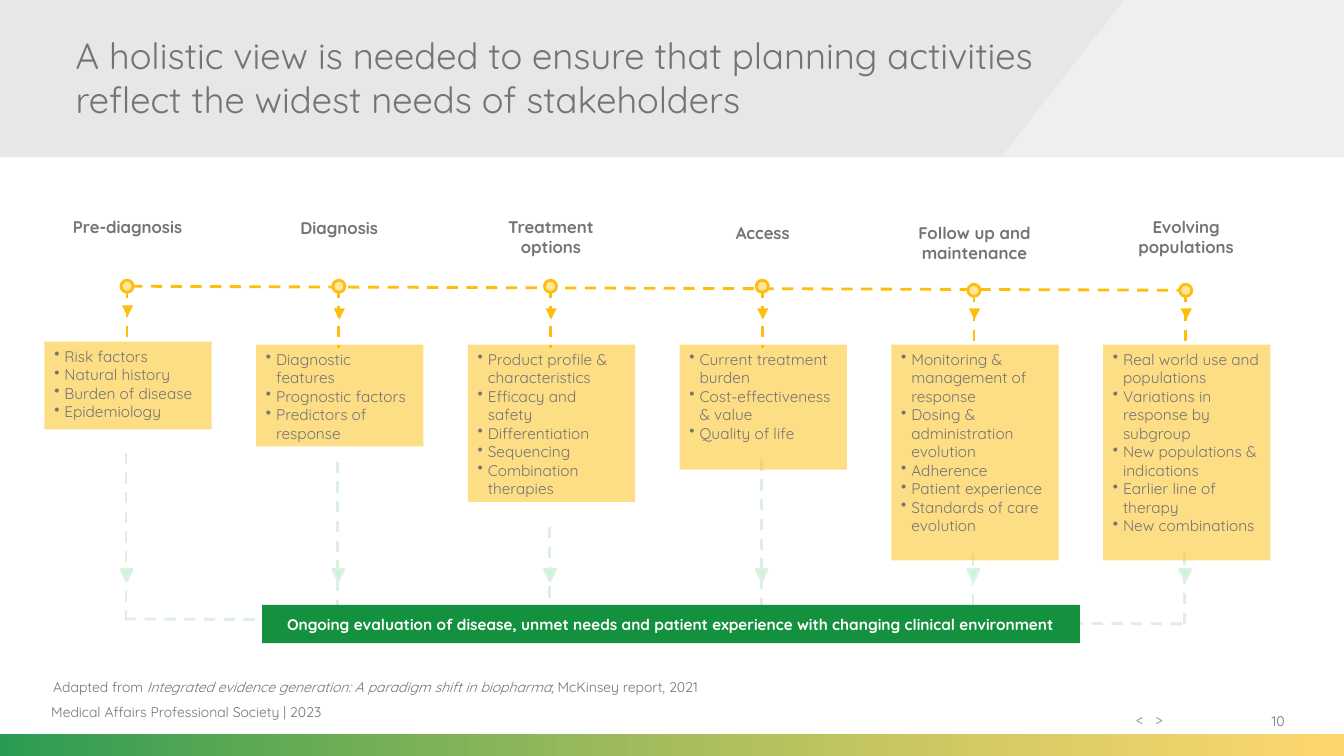
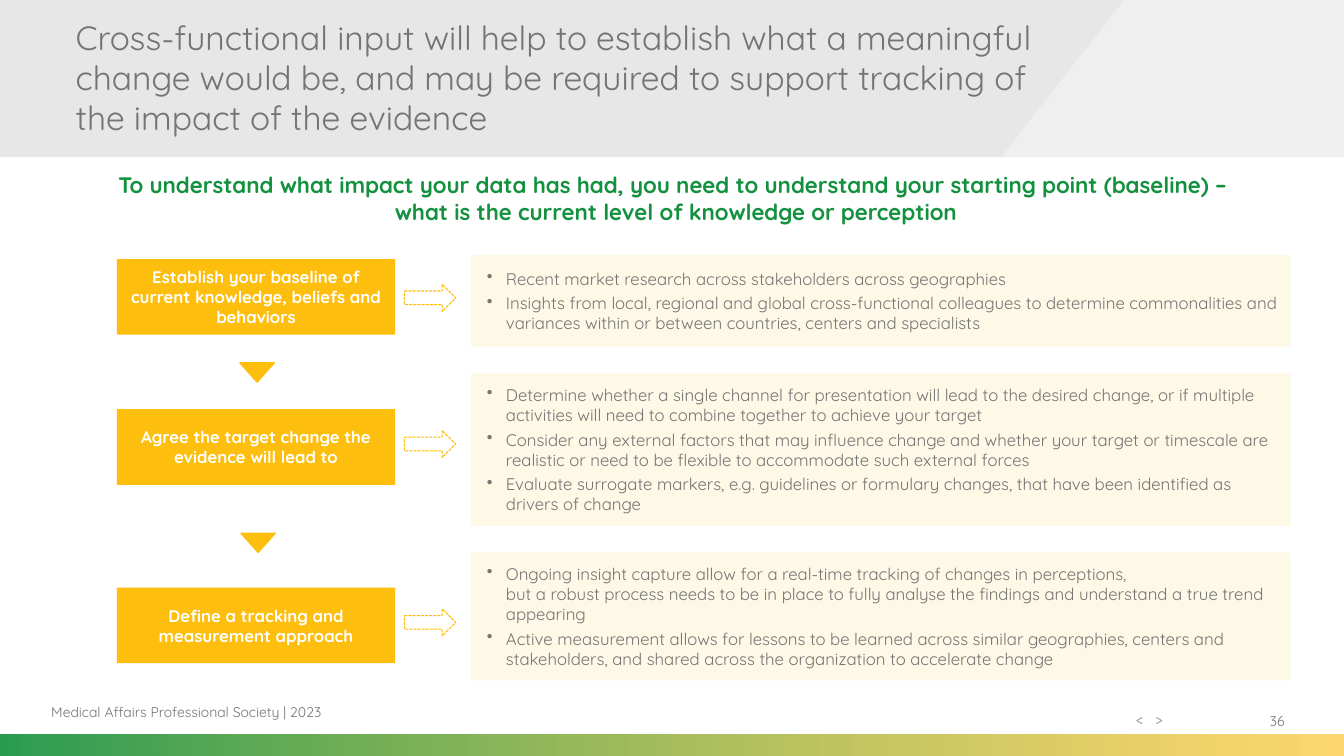
from lxml.etree import SubElement
from pptx import Presentation
from pptx.dml.color import RGBColor
from pptx.enum.dml import MSO_LINE as Dash
from pptx.enum.shapes import MSO_CONNECTOR as Connector, MSO_SHAPE as Shape
from pptx.enum.text import MSO_ANCHOR as Anchor, MSO_AUTO_SIZE as AutoSize, PP_ALIGN as Align
from pptx.oxml.ns import qn
from pptx.util import Pt

PX = 9144
FONT = "Quicksand"
GREY = RGBColor(0x74, 0x74, 0x74)
NAV_GREY = RGBColor(0x80, 0x80, 0x80)
BAND = RGBColor(0xD9, 0xD9, 0xD9)
WEDGE = RGBColor(0xF2, 0xF2, 0xF2)
WHITE = RGBColor(0xFF, 0xFF, 0xFF)
GREEN = RGBColor(0x13, 0x91, 0x3F)
MINT = RGBColor(0xC2, 0xF7, 0xD4)
PALE_GREEN = RGBColor(0xDD, 0xF0, 0xE4)
AMBER = RGBColor(0xFE, 0xBE, 0x0D)
PALE_AMBER = RGBColor(0xFF, 0xE5, 0x9E)


def draw(slide, kind, box, fill=None, alpha=100, line=None, weight=1):
    lengths = [value * PX for value in box]
    if kind is None:
        return slide.shapes.add_textbox(*lengths)
    shape = slide.shapes.add_shape(kind, *lengths)
    shape.shadow.inherit = False
    shape.fill.solid()
    shape.fill.fore_color.rgb = fill
    if alpha < 100:
        color = next(shape.element.spPr.iter(qn("a:srgbClr")))
        SubElement(color, qn("a:alpha"), val=str(alpha * 1000))
    if line is None:
        shape.line.fill.background()
    else:
        shape.line.color.rgb = line
        shape.line.width = Pt(weight)
    return shape


def write(shape, lines, size, color=GREY, bold=False, align=Align.LEFT,
          anchor=Anchor.TOP, bullet=None, gap=0):
    frame = shape.text_frame
    frame.word_wrap = True
    frame.auto_size = AutoSize.NONE
    frame.vertical_anchor = anchor
    for index, line in enumerate(lines):
        paragraph = frame.add_paragraph() if index else frame.paragraphs[0]
        paragraph.text = line
        paragraph.alignment = align
        paragraph.space_before = Pt(gap if index else 0)
        if bullet:
            margin, hanging = bullet
            properties = paragraph._p.get_or_add_pPr()
            properties.set("marL", str(margin * PX))
            properties.set("indent", str(-hanging * PX))
            SubElement(properties, qn("a:buChar"), char="•")
        for line_break in paragraph._p.findall(qn("a:br")):
            SubElement(line_break, qn("a:rPr"), sz=str(size * 100))
        for run in paragraph.runs:
            run.font.name = FONT
            run.font.size = Pt(size)
            run.font.bold = bold
            run.font.color.rgb = color


deck = Presentation()
deck.slide_width = 1333 * PX
deck.slide_height = 750 * PX
layout = deck.slide_layouts[5]
journey = deck.slides.add_slide(layout)
tracking = deck.slides.add_slide(layout)

band = draw(journey, Shape.RECTANGLE, (0, 0, 1333, 156), BAND, 62)
outline = journey.shapes.build_freeform(1115, 0, scale=PX)
outline.add_line_segments([(1333, 0), (1333, 156), (993, 156)], close=True)
wedge = outline.convert_to_shape()
wedge.shadow.inherit = False
wedge.fill.solid()
wedge.fill.fore_color.rgb = WEDGE
wedge.line.fill.background()
SubElement(next(wedge.element.spPr.iter(qn("a:srgbClr"))), qn("a:alpha"), val="79000")

strip = draw(journey, Shape.RECTANGLE, (0, 729, 1333, 21), GREEN)
strip.fill.gradient()
strip.fill.gradient_angle = 0
for stop, color in zip(strip.fill.gradient_stops, (GREEN, AMBER)):
    stop.color.rgb = color
for color, alpha in zip(strip.element.spPr.iter(qn("a:srgbClr")), ("90000", "60000")):
    SubElement(color, qn("a:alpha"), val=alpha)

society = draw(journey, None, (41, 686, 422, 40))
write(society, ["Medical Affairs Professional Society | 2023"], 10, anchor=Anchor.MIDDLE)
navigation = draw(journey, None, (1117, 700, 70, 27))
write(navigation, ["<\t>"], 10, NAV_GREY)
tabs = SubElement(navigation.text_frame.paragraphs[0]._p.get_or_add_pPr(), qn("a:tabLst"))
SubElement(tabs, qn("a:tab"), pos=str(19 * PX), algn="l")

for number, shared in enumerate((band, wedge, strip, society, navigation), 20):
    shared.element.nvSpPr.cNvPr.set("id", str(number))
    layout.shapes.element.append(shared.element)

for slide, heading, size, page in (
    (journey, "A holistic view is needed to ensure that planning activities "
     "reflect the widest needs of stakeholders", 26, "10"),
    (tracking, "Cross-functional input will help to establish what a meaningful change would be, "
     "and may be required to support tracking of the impact of the evidence", 24, "36"),
):
    title = slide.shapes.title
    title.left, title.top, title.width, title.height = 65 * PX, 0, 1000 * PX, 153 * PX
    write(title, [heading], size, anchor=Anchor.MIDDLE)
    write(draw(slide, None, (1193, 695, 91, 40)), [page], 10,
          align=Align.RIGHT, anchor=Anchor.MIDDLE)

STAGES = [
    ("Pre-diagnosis", 210, 278, 339, 87, 449, 614,
     ["Risk factors", "Natural history", "Burden of disease", "Epidemiology"]),
    ("Diagnosis", 211, 278, 342, 101, 458, 610,
     ["Diagnostic features", "Prognostic factors", "Predictors of response"]),
    ("Treatment\noptions", 210, 278, 342, 156, 523, 602,
     ["Product profile & characteristics", "Efficacy and safety", "Differentiation",
      "Sequencing", "Combination therapies"]),
    ("Access", 216, 278, 342, 124, 456, 610,
     ["Current treatment burden", "Cost-effectiveness & value", "Quality of life"]),
    ("Follow up and\nmaintenance", 216, 282, 342, 214, 550, 610,
     ["Monitoring & management of response", "Dosing & administration evolution",
      "Adherence", "Patient experience", "Standards of care evolution"]),
    ("Evolving\npopulations", 210, 282, 342, 214, 549, 627,
     ["Real world use and populations", "Variations in response by subgroup",
      "New populations & indications", "Earlier line of therapy", "New combinations"]),
]
FIRST_STAGE, STAGE_STEP = 126, 210

dashes = [(AMBER, 130, 284, 1178, 288), (PALE_GREEN, 124, 614, 1179, 619)]
for index, (_, _, dot_top, box_top, _, flow_top, flow_end, _) in enumerate(STAGES):
    center = FIRST_STAGE + index * STAGE_STEP
    dashes.append((AMBER, center, dot_top + 6, center, box_top + 3))
    dashes.append((PALE_GREEN, center - 1, flow_top, center - 1, flow_end))
for color, *ends in dashes:
    dash = journey.shapes.add_connector(Connector.STRAIGHT, *[value * PX for value in ends])
    dash.line.color.rgb = color
    dash.line.width = Pt(2)
    dash.line.dash_style = Dash.DASH
    SubElement(dash.element.spPr, qn("a:effectLst"))

for index, (label, label_top, dot_top, box_top, height, _, _, needs) in enumerate(STAGES):
    center = FIRST_STAGE + index * STAGE_STEP
    write(draw(journey, None, (center - 75, label_top, 151, 50)), label.split("\n"), 12,
          bold=True, align=Align.CENTER)
    draw(journey, Shape.OVAL, (center - 6, dot_top, 12, 12), PALE_AMBER, line=AMBER, weight=2)
    pointer = draw(journey, Shape.ISOSCELES_TRIANGLE, (center - 5, box_top - 36, 11, 11), AMBER)
    flow = draw(journey, Shape.ISOSCELES_TRIANGLE, (center - 6, 565, 11, 11), MINT,
                line=PALE_GREEN, weight=2)
    pointer.rotation = flow.rotation = 180
    write(draw(journey, Shape.RECTANGLE, (center - 82, box_top, 166, height), AMBER, 50),
          needs, 11, bullet=(10, 10))

write(draw(journey, Shape.RECTANGLE, (260, 600, 811, 38), GREEN),
      ["Ongoing evaluation of disease, unmet needs and patient experience "
       "with changing clinical environment"],
      11, WHITE, True, Align.CENTER, Anchor.MIDDLE)

citation = draw(journey, None, (43, 668, 767, 28)).text_frame
citation.word_wrap = True
for piece, italic in (
    ("Adapted from ", False),
    ("Integrated evidence generation: A paradigm shift in biopharma", True),
    ("; McKinsey report, 2021", False),
):
    run = citation.paragraphs[0].add_run()
    run.text = piece
    run.font.name = FONT
    run.font.size = Pt(10)
    run.font.italic = italic
    run.font.color.rgb = GREY

write(draw(tracking, None, (71, 165, 1199, 64)),
      ["To understand what impact your data has had, you need to understand "
       "your starting point (baseline) – ",
       "what is the current level of knowledge or perception"],
      16, GREEN, True, Align.CENTER)

STEPS = [
    ("Establish your baseline of current knowledge, beliefs and behaviors", 257, 282, 253, 91,
     ["Recent market research across stakeholders across geographies",
      "Insights from local, regional and global cross-functional colleagues to determine "
      "commonalities and variances within or between countries, centers and specialists"]),
    ("Agree the target change the evidence will lead to", 406, 427, 370, 152,
     ["Determine whether a single channel for presentation will lead to the desired change, "
      "or if multiple activities will need to combine together to achieve your target",
      "Consider any external factors that may influence change and whether your target or "
      "timescale are realistic or need to be flexible to accommodate such external forces",
      "Evaluate surrogate markers, e.g. guidelines or formulary changes, that have been "
      "identified as drivers of change"]),
    ("Define a tracking and measurement approach", 583, 604, 548, 127,
     ["Ongoing insight capture allow for a real-time tracking of changes in perceptions, \n"
      "but a robust process needs to be in place to fully analyse the findings and "
      "understand a true trend appearing",
      "Active measurement allows for lessons to be learned across similar geographies, centers "
      "and stakeholders, and shared across the organization to accelerate change"]),
]
for step, step_top, arrow_top, detail_top, detail_height, details in STEPS:
    write(draw(tracking, Shape.RECTANGLE, (116, step_top, 276, 75), AMBER), [step],
          12, WHITE, True, Align.CENTER, Anchor.MIDDLE)
    write(draw(tracking, Shape.RECTANGLE, (467, detail_top, 813, detail_height), AMBER, 10),
          details, 12, anchor=Anchor.MIDDLE, bullet=(25, 19), gap=3)
    arrow = draw(tracking, Shape.RIGHT_ARROW, (401, arrow_top, 51, 27), WHITE,
                 line=AMBER, weight=0.75)
    arrow.line.dash_style = Dash.SQUARE_DOT

for left, top in ((238, 360), (239, 529)):
    draw(tracking, Shape.ISOSCELES_TRIANGLE, (left, top, 34, 19), AMBER, line=AMBER).rotation = 180

deck.save("out.pptx")
